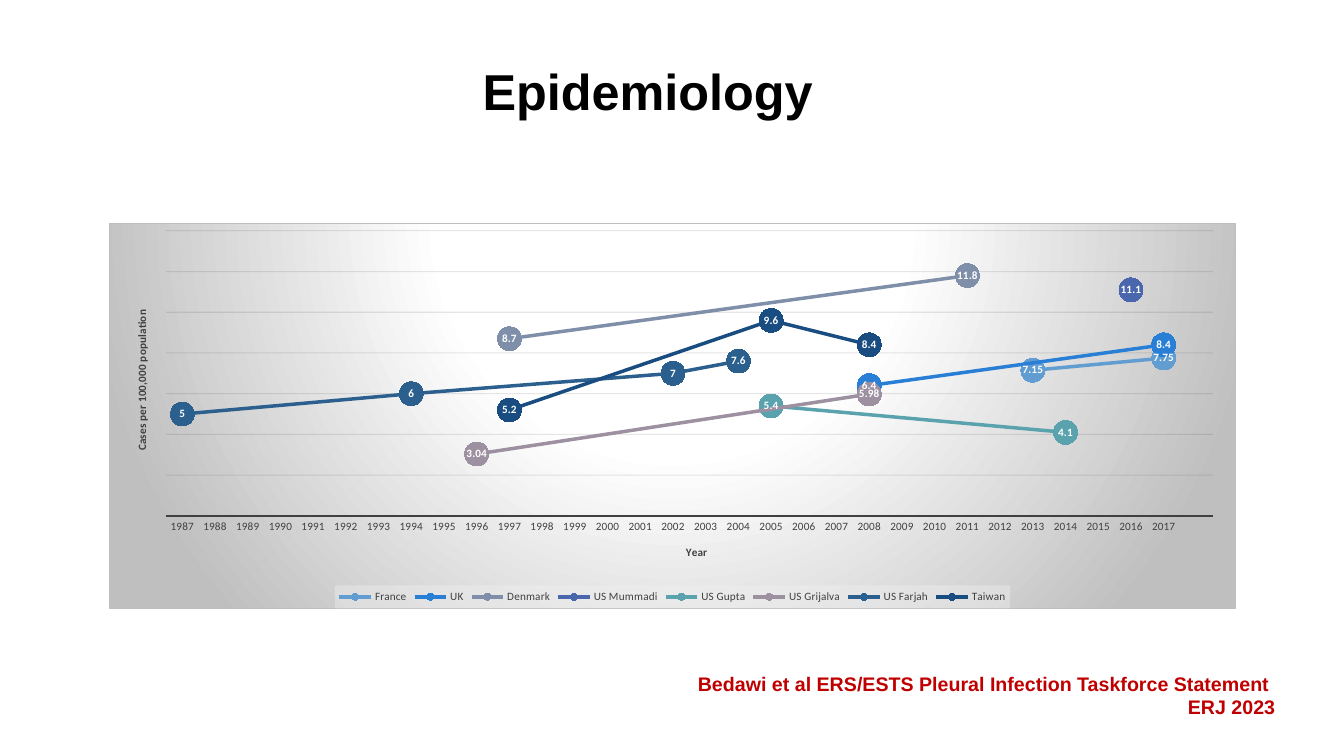
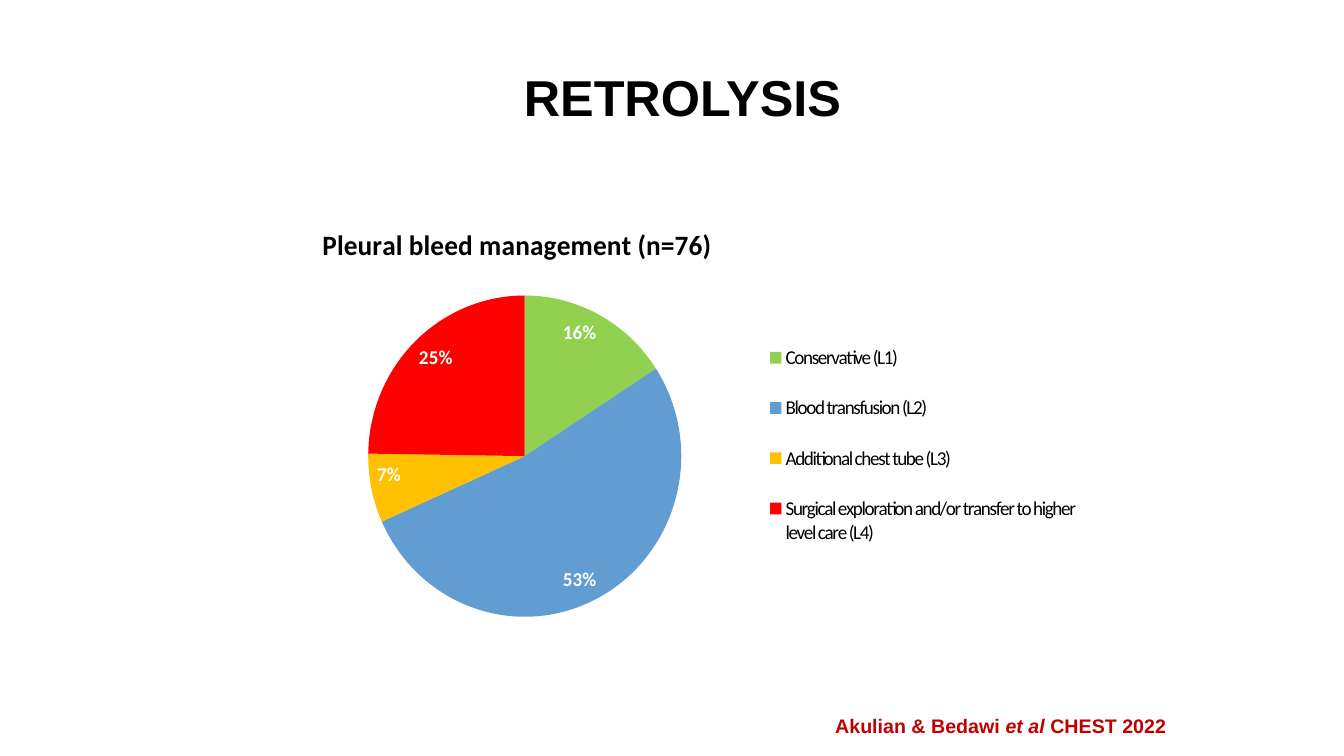
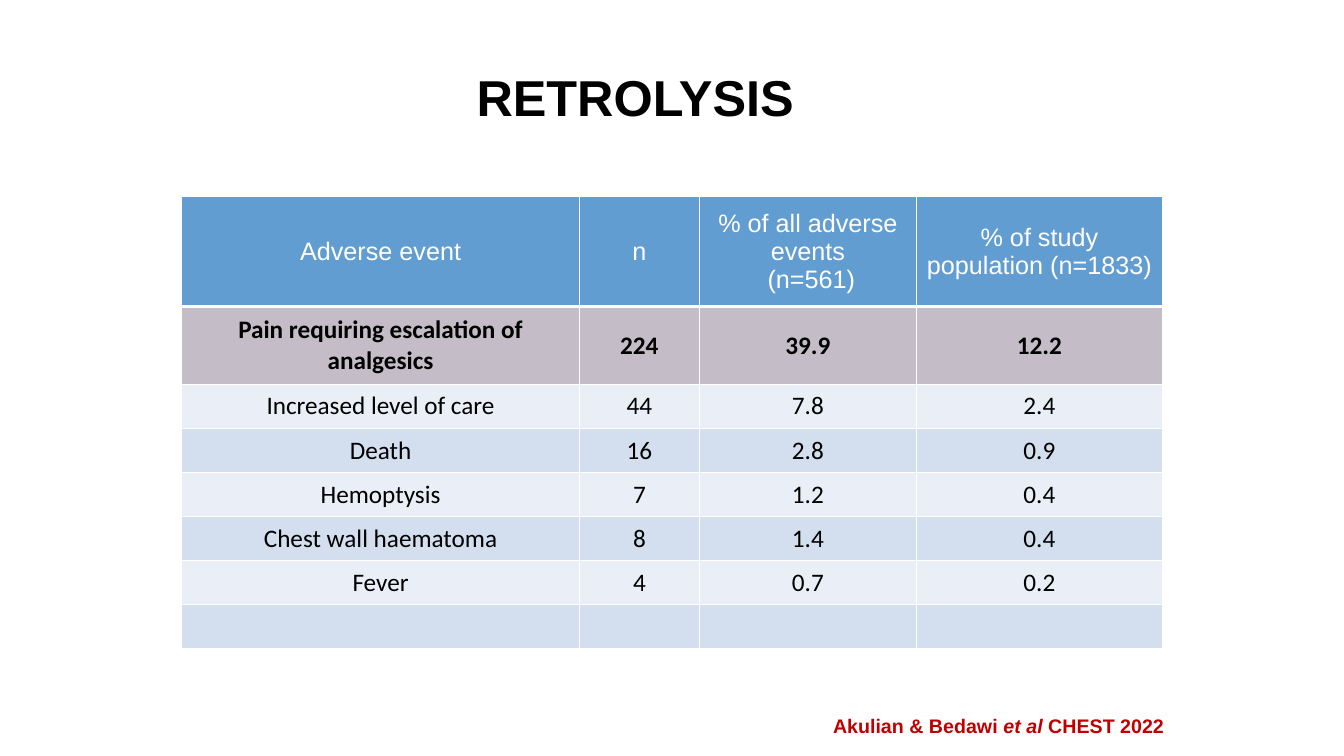
"""Build three slides on pleural infection: a line chart, a pie chart and a table."""

from dataclasses import dataclass

from lxml import etree
from pptx import Presentation
from pptx.chart.chart import Chart
from pptx.chart.data import CategoryChartData
from pptx.dml.color import RGBColor
from pptx.enum.chart import (
    XL_CHART_TYPE,
    XL_LABEL_POSITION,
    XL_LEGEND_POSITION,
    XL_MARKER_STYLE,
    XL_TICK_MARK,
)
from pptx.enum.text import MSO_ANCHOR, PP_ALIGN
from pptx.oxml import parse_xml
from pptx.oxml.ns import nsdecls, qn
from pptx.slide import Slide
from pptx.table import _Cell
from pptx.text.text import Font, _Paragraph
from pptx.util import Emu, Pt

PX = 9525
SLIDE_WIDTH, SLIDE_HEIGHT = 1280, 720
TITLE_WIDTH, TITLE_HEIGHT = 864, 120
TITLE_ONLY = 5

BLACK = RGBColor(0x00, 0x00, 0x00)
WHITE = RGBColor(0xFF, 0xFF, 0xFF)
CRIMSON = RGBColor(0xC0, 0x00, 0x00)
CHARCOAL = RGBColor(0x40, 0x40, 0x40)
SKY = RGBColor(0x62, 0x9D, 0xD1)
AZURE = RGBColor(0x29, 0x7F, 0xD5)
SLATE = RGBColor(0x7F, 0x8F, 0xA9)
INDIGO = RGBColor(0x4A, 0x66, 0xAC)
TEAL = RGBColor(0x5A, 0xA2, 0xAE)
MAUVE = RGBColor(0x9D, 0x90, 0xA0)
STEEL = RGBColor(0x2A, 0x5F, 0x8E)
NAVY = RGBColor(0x19, 0x4C, 0x80)
GREEN = RGBColor(0x92, 0xD0, 0x50)
AMBER = RGBColor(0xFF, 0xC0, 0x00)
RED = RGBColor(0xFF, 0x00, 0x00)
PALE_MAUVE = RGBColor(0xC4, 0xBC, 0xC6)
PALE_BLUE = RGBColor(0xEA, 0xEF, 0xF7)
LIGHT_BLUE = RGBColor(0xD3, 0xDF, 0xEE)

HEADING_FONT, BODY_FONT = "Arial", "Calibri"
LEFT, CENTER, RIGHT = PP_ALIGN.LEFT, PP_ALIGN.CENTER, PP_ALIGN.RIGHT
MIDDLE = MSO_ANCHOR.MIDDLE
LINE_CHART, PIE_CHART = XL_CHART_TYPE.LINE_MARKERS, XL_CHART_TYPE.PIE
LEGEND_BOTTOM, LEGEND_RIGHT = XL_LEGEND_POSITION.BOTTOM, XL_LEGEND_POSITION.RIGHT
LABEL_CENTER, LABEL_INSIDE = XL_LABEL_POSITION.CENTER, XL_LABEL_POSITION.INSIDE_END
CIRCLE = XL_MARKER_STYLE.CIRCLE
NO_TICK = XL_TICK_MARK.NONE

YEARS = range(1987, 2018)


@dataclass(frozen=True)
class Area:
    """A rectangle in px."""

    left: int
    top: int
    width: int
    height: int

    def emu(self) -> tuple[Emu, Emu, Emu, Emu]:
        """Return the rectangle in EMU."""
        return px(self.left), px(self.top), px(self.width), px(self.height)


@dataclass(frozen=True)
class Study:
    """Incidence by year in one study."""

    name: str
    color: RGBColor
    cases: dict[int, float]


@dataclass(frozen=True)
class Slice:
    """One share of the pie."""

    name: str
    color: RGBColor
    percent: int


@dataclass(frozen=True)
class Span:
    """A piece of a citation."""

    text: str
    italic: bool = False


@dataclass(frozen=True)
class EventRow:
    """One table row with its look."""

    texts: tuple[str, ...]
    height: int
    fill: RGBColor
    color: RGBColor = BLACK
    font: str = BODY_FONT
    bold: bool = False
    rule: int = 1


STUDIES = (
    Study("France", SKY, {2013: 7.15, 2017: 7.75}),
    Study("UK", AZURE, {2008: 6.4, 2017: 8.4}),
    Study("Denmark", SLATE, {1997: 8.7, 2011: 11.8}),
    Study("US Mummadi", INDIGO, {2016: 11.1}),
    Study("US Gupta", TEAL, {2005: 5.4, 2014: 4.1}),
    Study("US Grijalva", MAUVE, {1996: 3.04, 2008: 5.98}),
    Study("US Farjah", STEEL, {1987: 5, 1994: 6, 2002: 7, 2004: 7.6}),
    Study("Taiwan", NAVY, {1997: 5.2, 2005: 9.6, 2008: 8.4}),
)
SLICES = (
    Slice("Conservative (L1)", GREEN, 16),
    Slice("Blood transfusion (L2)", SKY, 53),
    Slice("Additional chest tube (L3)", AMBER, 7),
    Slice("Surgical exploration and/or transfer to higher level care (L4)", RED, 25),
)
EVENTS = (
    EventRow(
        ("Adverse event", "n", "% of all adverse events\n (n=561)", "% of study population (n=1833)"),
        105, SKY, WHITE, HEADING_FONT, rule=3,
    ),
    EventRow(("Pain requiring escalation of analgesics", "224", "39.9", "12.2"), 74, PALE_MAUVE, bold=True),
    EventRow(("Increased level of care", "44", "7.8", "2.4"), 42, PALE_BLUE),
    EventRow(("Death", "16", "2.8", "0.9"), 42, LIGHT_BLUE),
    EventRow(("Hemoptysis", "7", "1.2", "0.4"), 42, PALE_BLUE),
    EventRow(("Chest wall haematoma", "8", "1.4", "0.4"), 42, LIGHT_BLUE),
    EventRow(("Fever", "4", "0.7", "0.2"), 42, PALE_BLUE),
    EventRow(("", "", "", ""), 42, LIGHT_BLUE),
)
COLUMN_WIDTHS = (379, 114, 207, 234)
NARROW_COLUMN = 2
TASKFORCE = (
    (Span("Bedawi et al ERS/ESTS Pleural Infection Taskforce Statement "),),
    (Span("ERJ 2023"),),
)
TRIAL = ((Span("Akulian & Bedawi"), Span(" et al ", True), Span("CHEST 2022")),)


def px(length: int) -> Emu:
    """Turn px into EMU."""
    return Emu(length * PX)


def format_font(
    font: Font,
    *,
    size: int,
    color: RGBColor = BLACK,
    name: str = BODY_FONT,
    bold: bool = False,
    italic: bool = False,
) -> None:
    """Set every shared property of a font."""
    font.size = Pt(size)
    font.name = name
    font.bold = bold
    font.italic = italic
    font.color.rgb = color


def write(
    para: _Paragraph,
    text: str,
    *,
    size: int,
    color: RGBColor = BLACK,
    font: str = BODY_FONT,
    bold: bool = False,
    italic: bool = False,
    align: PP_ALIGN | None = None,
) -> None:
    """Add formatted text to a paragraph."""
    if align is not None:
        para.alignment = align
    span = para.add_run()
    span.text = text
    format_font(span.font, size=size, color=color, name=font, bold=bold, italic=italic)


def add_titled_slide(deck: Presentation, text: str, left: int, top: int) -> Slide:
    """Add a slide and place its title."""
    slide = deck.slides.add_slide(deck.slide_layouts[TITLE_ONLY])
    title = slide.shapes.title
    title.left, title.top, title.width, title.height = Area(left, top, TITLE_WIDTH, TITLE_HEIGHT).emu()
    title.text_frame.vertical_anchor = MIDDLE
    write(title.text_frame.paragraphs[0], text, size=36, font=HEADING_FONT, bold=True, align=CENTER)
    return slide


def add_citation(
    slide: Slide,
    area: Area,
    lines: tuple[tuple[Span, ...], ...],
    *,
    align: PP_ALIGN = LEFT,
    wrap: bool = False,
) -> None:
    """Add a citation, one paragraph a line."""
    frame = slide.shapes.add_textbox(*area.emu()).text_frame
    frame.word_wrap = wrap
    for index, line in enumerate(lines):
        para = frame.add_paragraph() if index else frame.paragraphs[0]
        for span in line:
            write(para, span.text, size=14, color=CRIMSON, font=HEADING_FONT,
                  bold=True, italic=span.italic, align=align)


def place(chart: Chart, query: str, *, x: float, y: float, w: float = 0, h: float = 0) -> None:
    """Fix a chart part at fractions of the chart size."""
    part = chart.element.xpath(query)[0]
    for old in part.xpath("c:layout"):
        part.remove(old)
    layout = parse_xml(f"<c:layout {nsdecls('c')}><c:manualLayout/></c:layout>")
    settings = {"xMode": "edge", "yMode": "edge", "x": x, "y": y}
    if w:
        settings |= {"w": w, "h": h}
    if part.tag == qn("c:plotArea"):
        settings = {"layoutTarget": "inner"} | settings
    for name, value in settings.items():
        etree.SubElement(layout[0], qn(f"c:{name}")).set("val", str(value))
    leading = part.xpath("c:tx|c:legendPos")
    part.insert(len(leading), layout)


def add_legend(chart: Chart, position: XL_LEGEND_POSITION, size: int, color: RGBColor) -> None:
    """Show the legend beside the plot."""
    chart.has_legend = True
    chart.legend.position = position
    chart.legend.include_in_layout = False
    format_font(chart.legend.font, size=size, color=color)


def fill_line_chart(chart: Chart) -> None:
    """Give the chart its gradient and its legend a pale tint."""
    chart.element.xpath("c:chart")[0].addnext(parse_xml(
        f"<c:spPr {nsdecls('c', 'a')}><a:gradFill><a:gsLst>"
        '<a:gs pos="0"><a:srgbClr val="FFFFFF"/></a:gs>'
        '<a:gs pos="39000"><a:srgbClr val="FFFFFF"/></a:gs>'
        '<a:gs pos="100000"><a:srgbClr val="BFBFBF"/></a:gs></a:gsLst>'
        '<a:path path="circle"><a:fillToRect l="50000" t="-80000" r="50000" b="180000"/></a:path>'
        '</a:gradFill><a:ln w="9525"><a:solidFill><a:srgbClr val="BFBFBF"/></a:solidFill></a:ln></c:spPr>'
    ))
    chart.element.xpath("c:chart/c:legend/c:overlay")[0].addnext(parse_xml(
        f"<c:spPr {nsdecls('c', 'a')}><a:solidFill><a:srgbClr val=\"F2F2F2\">"
        '<a:alpha val="39000"/></a:srgbClr></a:solidFill></c:spPr>'
    ))


def add_incidence_chart(slide: Slide, area: Area) -> None:
    """Add the line chart of cases by year."""
    data = CategoryChartData()
    data.categories = [*map(str, YEARS), ""]
    for study in STUDIES:
        data.add_series(study.name, [*map(study.cases.get, YEARS), None])
    chart = slide.shapes.add_chart(LINE_CHART, *area.emu(), data).chart
    chart.has_title = False
    format_font(chart.font, size=8)
    chart.plots[0].vary_by_categories = False
    chart.element.xpath("c:chart/c:dispBlanksAs")[0].set("val", "span")

    for study, series in zip(STUDIES, chart.plots[0].series):
        series.smooth = False
        series.format.line.width = Pt(2.5)
        series.format.line.color.rgb = study.color
        series.marker.style = CIRCLE
        series.marker.size = 17
        series.marker.format.fill.solid()
        series.marker.format.fill.fore_color.rgb = study.color
        series.marker.format.line.color.rgb = study.color
        labels = series.data_labels
        labels.show_value = True
        labels.position = LABEL_CENTER
        format_font(labels.font, size=8, color=WHITE, bold=True)

    years, cases = chart.category_axis, chart.value_axis
    years.major_tick_mark = years.minor_tick_mark = NO_TICK
    years.format.line.width = Pt(1.5)
    years.format.line.color.rgb = CHARCOAL
    format_font(years.tick_labels.font, size=8, color=CHARCOAL)
    cases.minimum_scale, cases.maximum_scale, cases.major_unit = 0, 14, 2
    cases.visible = False
    grid = cases.major_gridlines.format.line
    grid.width = Pt(0.75)
    grid.color.rgb = RGBColor(0x0D, 0x0D, 0x0D)
    grid_color = chart.element.xpath("//c:majorGridlines//a:srgbClr")[0]
    etree.SubElement(grid_color, qn("a:alpha")).set("val", "10000")
    for axis, text in ((years, "Year"), (cases, "Cases per 100,000 population")):
        para = axis.axis_title.text_frame.paragraphs[0]
        write(para, text, size=8, color=CHARCOAL, bold=True)
    turned = chart.element.xpath("//c:valAx/c:title//a:bodyPr")[0]
    turned.set("rot", "-5400000")
    turned.set("vert", "horz")

    add_legend(chart, LEGEND_BOTTOM, 8, CHARCOAL)
    fill_line_chart(chart)
    place(chart, "//c:plotArea", x=0.05, y=0.02, w=0.93, h=0.74)
    place(chart, "//c:catAx/c:title", x=0.51, y=0.83)
    place(chart, "//c:valAx/c:title", x=0.02, y=0.22)
    place(chart, "//c:legend", x=0.2, y=0.94, w=0.6, h=0.06)


def add_bleed_chart(slide: Slide, area: Area) -> None:
    """Add the pie chart of bleed management."""
    data = CategoryChartData(number_format='0"%"')
    data.categories = [part.name for part in SLICES]
    data.add_series("Series 1", [part.percent for part in SLICES])
    chart = slide.shapes.add_chart(PIE_CHART, *area.emu(), data).chart
    format_font(chart.font, size=10)
    chart.has_title = True
    write(chart.chart_title.text_frame.paragraphs[0], "Pleural bleed management (n=76)", size=20, bold=True)

    plot = chart.plots[0]
    plot.vary_by_categories = True
    for index, part in enumerate(SLICES):
        fill = plot.series[0].points[index].format.fill
        fill.solid()
        fill.fore_color.rgb = part.color
    labels = plot.series[0].data_labels
    labels.show_value = True
    labels.number_format = '0"%"'
    labels.number_format_is_linked = False
    labels.position = LABEL_INSIDE
    format_font(labels.font, size=14, color=WHITE, bold=True)

    add_legend(chart, LEGEND_RIGHT, 14, BLACK)
    chart.element.xpath("//c:legend//a:defRPr")[0].set("spc", "-110")
    place(chart, "c:chart/c:title", x=0.06, y=0.03)
    place(chart, "//c:plotArea", x=0.12, y=0.18, w=0.37, h=0.79)
    place(chart, "//c:legend", x=0.58, y=0.26, w=0.39, h=0.58)


def draw_borders(cell: _Cell, bottom: int) -> None:
    """Draw white cell borders, 1 pt but for the bottom one."""
    properties = cell._tc.get_or_add_tcPr()
    for side, width in (("L", 1), ("R", 1), ("T", 1), ("B", bottom)):
        properties.append(parse_xml(
            f'<a:ln{side} {nsdecls("a")} w="{Pt(width)}"><a:solidFill>'
            f'<a:srgbClr val="{WHITE}"/></a:solidFill></a:ln{side}>'
        ))


def add_event_table(slide: Slide, left: int, top: int) -> None:
    """Add the table of adverse events."""
    area = Area(left, top, sum(COLUMN_WIDTHS), sum(event.height for event in EVENTS))
    table = slide.shapes.add_table(len(EVENTS), len(COLUMN_WIDTHS), *area.emu()).table
    for column, width in zip(table.columns, COLUMN_WIDTHS):
        column.width = px(width)
    for row, event in zip(table.rows, EVENTS):
        row.height = px(event.height)
        for index, (cell, text) in enumerate(zip(row.cells, event.texts)):
            draw_borders(cell, event.rule)
            cell.fill.solid()
            cell.fill.fore_color.rgb = event.fill
            cell.vertical_anchor = MIDDLE
            side, edge = (6, 0) if index == NARROW_COLUMN else (7, 4)
            cell.margin_left = cell.margin_right = px(side)
            cell.margin_top = cell.margin_bottom = px(edge)
            for number, line in enumerate(text.splitlines()):
                frame = cell.text_frame
                para = frame.add_paragraph() if number else frame.paragraphs[0]
                write(para, line, size=18, color=event.color, font=event.font,
                      bold=event.bold, align=CENTER)


def main() -> None:
    """Build and save the deck."""
    deck = Presentation()
    deck.slide_width, deck.slide_height = px(SLIDE_WIDTH), px(SLIDE_HEIGHT)

    slide = add_titled_slide(deck, "Epidemiology", 185, 26)
    add_incidence_chart(slide, Area(104, 212, 1073, 368))
    add_citation(slide, Area(617, 635, 607, 56), TASKFORCE, align=RIGHT, wrap=True)

    slide = add_titled_slide(deck, "RETROLYSIS", 218, 32)
    add_bleed_chart(slide, Area(254, 197, 827, 413))
    add_citation(slide, Area(786, 675, 336, 33), TRIAL)

    slide = add_titled_slide(deck, "RETROLYSIS", 173, 32)
    add_event_table(slide, 173, 187)
    add_citation(slide, Area(784, 675, 336, 33), TRIAL)

    deck.save("out.pptx")


if __name__ == "__main__":
    main()
